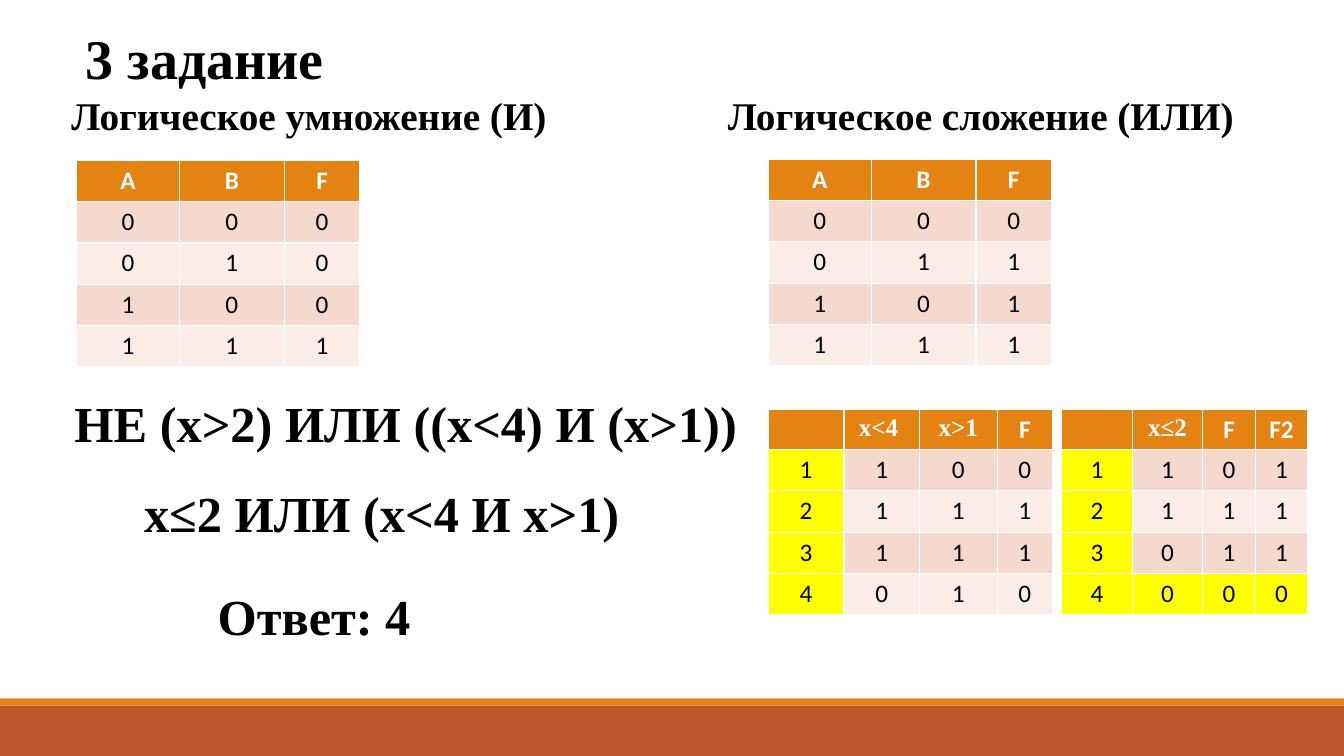
"""Build the logic truth-table slide."""
from pptx import Presentation
from pptx.dml.color import RGBColor
from pptx.enum import shapes, text
from pptx.util import Inches, Pt

COLORS = {"orange": "E48312", "rust": "BD582C", "odd": "F5D9CC", "even": "FAEDE7",
          "yellow": "FFFF00", "black": "000000", "white": "FFFFFF"}
SERIF, SANS = "Times New Roman", "Calibri"


def style(p, size, font, color, bold):
    p.font.size = Pt(size)
    p.font.name = font
    p.font.bold = bold
    p.font.color.rgb = RGBColor.from_string(COLORS[color])


prs = Presentation()
prs.slide_width, prs.slide_height = Inches(13.33), Inches(7.5)
s = prs.slides.add_slide(prs.slide_layouts[5])

for top, height, color in [(7, 0.5, "rust"), (6.93, 0.07, "orange")]:
    bar = s.shapes.add_shape(shapes.MSO_SHAPE.RECTANGLE, 0, Inches(top),
                             prs.slide_width, Inches(height))
    bar.shadow.inherit = False
    bar.fill.solid()
    bar.fill.fore_color.rgb = RGBColor.from_string(COLORS[color])
    bar.line.fill.background()

title = s.shapes.title
title.left, title.top, title.width, title.height = map(Inches, (0.61, 0.29, 10, 0.67))
tf = title.text_frame
tf.text = "3 задание"
tf.margin_left = Inches(0.24)
tf.vertical_anchor = text.MSO_ANCHOR.MIDDLE
p = tf.paragraphs[0]
p.alignment = text.PP_ALIGN.LEFT
p.line_spacing = 0.8
style(p, 40, SERIF, "black", True)

headings = [("Логическое умножение (И)", 0.61), ("Логическое сложение (ИЛИ)", 7.12)]
for heading, left in headings:
    sp = s.shapes.add_textbox(Inches(left), Inches(0.91), Inches(10), Inches(0.67))
    tf = sp.text_frame
    tf.word_wrap = True
    tf.text = heading
    p = tf.paragraphs[0]
    p.line_spacing = 0.9
    style(p, 28, SERIF, "black", True)

formulas = [
    ("НЕ (x>2) ИЛИ ((x<4) И (x>1))", 0.15, 3.8, 7.34, 0.72),
    ("x≤2 ИЛИ (x<4 И x>1)", 0.84, 4.69, 5.46, 0.75),
    ("Ответ: 4", 1.57, 5.71, 2.63, 0.75),
]
for formula, *box in formulas:
    sp = s.shapes.add_textbox(*map(Inches, box))
    tf = sp.text_frame
    tf.word_wrap = False
    tf.auto_size = text.MSO_AUTO_SIZE.SHAPE_TO_FIT_TEXT
    tf.text = formula
    p = tf.paragraphs[0]
    p.alignment = text.PP_ALIGN.JUSTIFY
    p.line_spacing = 1.07
    p._p.get_or_add_pPr().set("indent", str(Inches(0.49)))
    style(p, 36, SERIF, "black", True)

basic_cols, step_cols, result_cols = [1.02, 1.04, 0.75], [0.75, 0.75, 0.77, 0.55], [0.7, 0.7, 0.52, 0.52]
step_marks = {(r, 0) for r in range(1, 5)}
result_marks = step_marks | {(4, c) for c in range(4)}
tables = [
    (0.76, 1.59, 0.41, basic_cols, ["A", "B", "F"], ["000", "010", "100", "111"], set()),
    (7.62, 1.58, 0.41, basic_cols, ["A", "B", "F"], ["000", "011", "101", "111"], set()),
    (7.62, 4.06, 0.39, step_cols, ["", "x<4 ", "x>1", "F"],
     ["1100", "2111", "3111", "4010"], step_marks),
    (10.53, 4.06, 0.39, result_cols, ["", "x≤2", "F", "F2"],
     ["1101", "2111", "3011", "4000"], result_marks),
]
for left, top, header_height, cols, header, body, marks in tables:
    rows = [header, *body]
    table = s.shapes.add_table(len(rows), len(cols), Inches(left), Inches(top),
                               Inches(sum(cols)), Inches(header_height + 4 * 0.41)).table
    for c, width in enumerate(cols):
        table.columns[c].width = Inches(width)
    for r, values in enumerate(rows):
        table.rows[r].height = Inches(0.41 if r else header_height)
        for c, value in enumerate(values):
            cell = table.cell(r, c)
            cell.text = value
            if r == 0:
                fill = "orange"
            elif (r, c) in marks:
                fill = "yellow"
            else:
                fill = "odd" if r % 2 else "even"
            cell.fill.solid()
            cell.fill.fore_color.rgb = RGBColor.from_string(COLORS[fill])
            p = cell.text_frame.paragraphs[0]
            p.alignment = text.PP_ALIGN.CENTER
            style(p, 18, SERIF if "x" in value else SANS, "black" if r else "white", r == 0)

prs.save("out.pptx")
